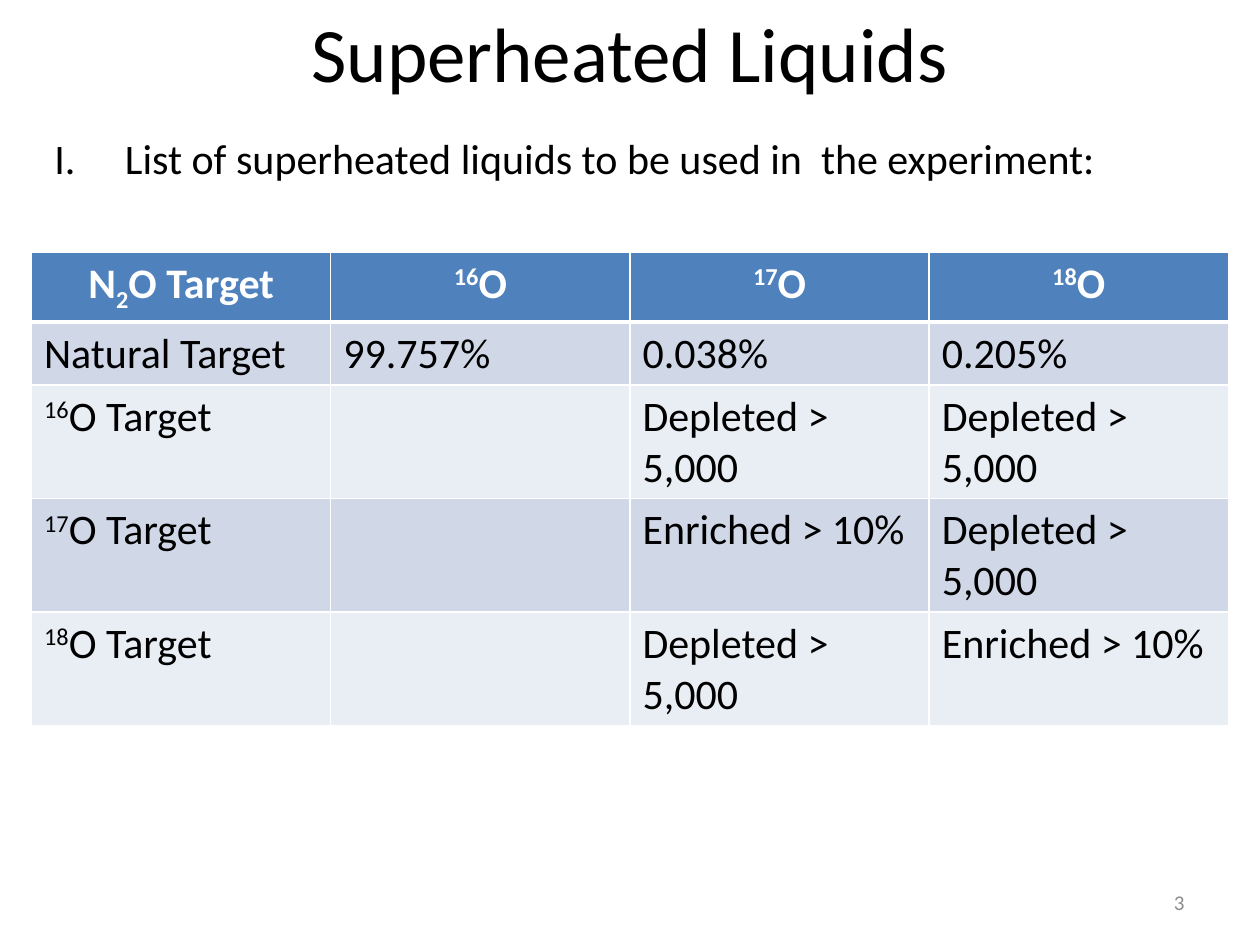
from lxml import etree
from pptx import Presentation
from pptx.dml.color import RGBColor
from pptx.enum.text import MSO_ANCHOR, PP_ALIGN
from pptx.oxml.ns import qn
from pptx.util import Inches, Pt

LEFT, CENTER, RIGHT = PP_ALIGN.LEFT, PP_ALIGN.CENTER, PP_ALIGN.RIGHT
TOP, MIDDLE = MSO_ANCHOR.TOP, MSO_ANCHOR.MIDDLE
WIDTH, HEIGHT = Inches(10), Inches(7.5)
BLANK_LAYOUT = 6
FONT = "Calibri"
COLORS = {
    "text": "000000",
    "number": "8C8C8C",
    "header": "4F81BD",
    "header_text": "FFFFFF",
    "border": "FFFFFF",
    "odd_row": "D0D8E8",
    "even_row": "E9EDF4",
}
SUPERSCRIPT, SUBSCRIPT = 30, -25


def isotope(mass, rest="O"):
    return [(str(mass), SUPERSCRIPT), (rest, 0)]


DEPLETED, ENRICHED = "Depleted > 5,000", "Enriched > 10%"
TARGETS = [
    [[("N", 0), ("2", SUBSCRIPT), ("O Target", 0)], isotope(16), isotope(17), isotope(18)],
    ["Natural Target", "99.757%", "0.038%", "0.205%"],
    [isotope(16, "O Target"), "", DEPLETED, DEPLETED],
    [isotope(17, "O Target"), "", ENRICHED, DEPLETED],
    [isotope(18, "O Target"), "", DEPLETED, ENRICHED],
]


class SlideBuilder:
    """Draws on one slide; boxes are (left, top, width, height) as shares of it."""

    def __init__(self, slide):
        self.slide = slide

    def place(self, box):
        return [round(share * side) for share, side in zip(box, (WIDTH, HEIGHT) * 2)]

    def fill_paragraph(self, paragraph, content, size, color, align=LEFT, bold=False):
        """Fill a paragraph with a string or a list of (text, baseline) pieces."""
        pieces = [(content, 0)] if isinstance(content, str) else content
        paragraph.alignment = align
        paragraph.font.size = Pt(size)
        for text, baseline in pieces:
            run = paragraph.add_run()
            run.text = text
            run.font.name, run.font.size, run.font.bold = FONT, Pt(size), bold
            run.font.color.rgb = RGBColor.from_string(COLORS[color])
            if baseline:
                run.font._element.set("baseline", str(baseline * 1000))

    def text(self, box, content, size, color="text", align=LEFT, anchor=TOP):
        frame = self.slide.shapes.add_textbox(*self.place(box)).text_frame
        frame.word_wrap = True
        frame.vertical_anchor = anchor
        self.fill_paragraph(frame.paragraphs[0], content, size, color, align)
        return frame.paragraphs[0]

    def roman_item(self, box, content, size, indent):
        paragraph = self.text(box, content, size)
        paragraph.space_before = Pt(size * 0.2)
        properties = paragraph._p.get_or_add_pPr()
        properties.set("marL", str(Inches(indent)))
        properties.set("indent", str(-Inches(indent)))
        # Bullet elements belong between the spacing and the default run style.
        default_style = properties.find(qn("a:defRPr"))
        for tag, name, value in (("a:buFont", "typeface", "+mj-lt"),
                                 ("a:buAutoNum", "type", "romanUcPeriod")):
            bullet = etree.SubElement(properties, qn(tag))
            bullet.set(name, value)
            if default_style is not None:
                default_style.addprevious(bullet)

    def borders(self, cell, bottom):
        properties = cell._tc.get_or_add_tcPr()
        for side, points in (("L", 1), ("R", 1), ("T", 1), ("B", bottom)):
            line = etree.SubElement(properties, qn(f"a:ln{side}"), w=str(Pt(points)))
            fill = etree.SubElement(line, qn("a:solidFill"))
            etree.SubElement(fill, qn("a:srgbClr"), val=COLORS["border"])

    def table(self, box, rows, size, row_height):
        """Rows start at row_height inches and grow with their text."""
        shape = self.slide.shapes.add_table(len(rows), len(rows[0]), *self.place(box))
        for row_index, row in enumerate(rows):
            header = row_index == 0
            band = "header" if header else "odd_row" if row_index % 2 else "even_row"
            shape.table.rows[row_index].height = Inches(row_height)
            for column_index, content in enumerate(row):
                cell = shape.table.cell(row_index, column_index)
                self.borders(cell, bottom=3 if header else 1)
                cell.fill.solid()
                cell.fill.fore_color.rgb = RGBColor.from_string(COLORS[band])
                self.fill_paragraph(cell.text_frame.paragraphs[0], content, size,
                                    "header_text" if header else "text",
                                    CENTER if header else LEFT, bold=header)
        shape.height = self.place(box)[3]


def main():
    presentation = Presentation()
    presentation.slide_width, presentation.slide_height = WIDTH, HEIGHT
    layout = presentation.slide_layouts[BLANK_LAYOUT]
    builder = SlideBuilder(presentation.slides.add_slide(layout))

    builder.roman_item((1 / 30, 2 / 15, 0.95, 0.84),
                       "List of superheated liquids to be used in  the experiment:",
                       size=24, indent=0.56)
    builder.text((0.05, 0, 0.9, 0.11), "Superheated Liquids", 44,
                 align=CENTER, anchor=MIDDLE)
    builder.text((0.72, 0.93, 0.23, 0.05), "3", 12, "number", RIGHT, MIDDLE)
    builder.table((0.025, 4 / 15, 0.95, 0.49), TARGETS, size=24, row_height=0.41)

    presentation.save("out.pptx")


if __name__ == "__main__":
    main()
